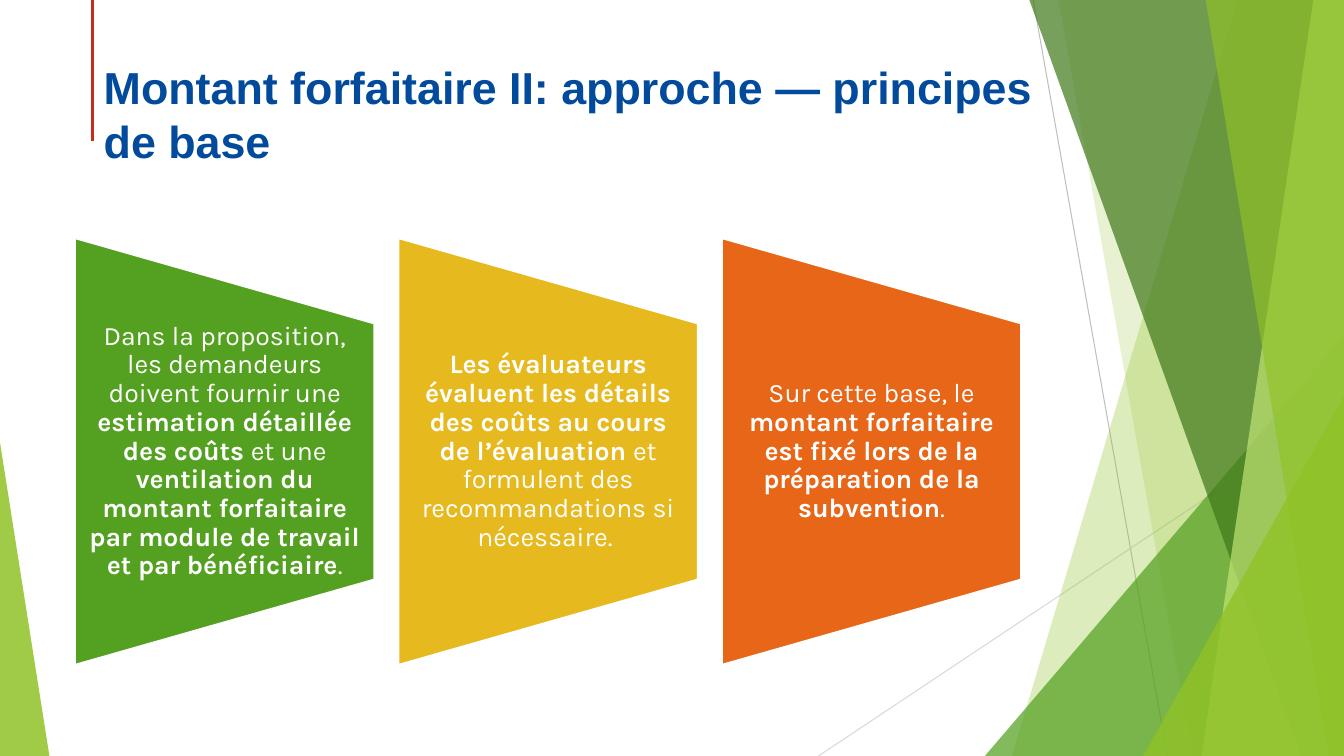
from lxml.etree import SubElement
from pptx import Presentation
from pptx.dml.color import RGBColor
from pptx.enum.shapes import MSO_CONNECTOR, MSO_SHAPE
from pptx.enum.text import MSO_ANCHOR, PP_ALIGN
from pptx.oxml.ns import qn
from pptx.util import Pt

WIDTH, HEIGHT = 960, 540
WHITE = RGBColor(0xFF, 0xFF, 0xFF)
SILVER = RGBColor(0xBF, 0xBF, 0xBF)
PALE_GREY = RGBColor(0xD9, 0xD9, 0xD9)
RED = RGBColor(0xC4, 0x2F, 0x1A)
BLUE = RGBColor(0x02, 0x4B, 0x9C)
LIME = RGBColor(0x90, 0xC2, 0x26)
PALE_LIME = RGBColor(0xC0, 0xE4, 0x74)
GREEN = RGBColor(0x54, 0xA0, 0x21)
DARK_GREEN = RGBColor(0x3F, 0x78, 0x19)
YELLOW = RGBColor(0xE6, 0xB9, 0x1E)
ORANGE = RGBColor(0xE7, 0x66, 0x18)

TITLE = "Montant forfaitaire II: approche — principes de base"
# Each step: colour and runs of (text, bold)
STEPS = [
    (GREEN, [
        ("Dans la proposition, les demandeurs doivent fournir une ", False),
        ("estimation détaillée des coûts ", True),
        ("et une ", False),
        ("ventilation du montant forfaitaire par module de travail "
         "et par bénéficiaire", True),
        (".", False)]),
    (YELLOW, [
        ("Les évaluateurs évaluent les détails des coûts au cours de "
         "l’évaluation ", True),
        ("et formulent des recommandations si nécessaire. ", False)]),
    (ORANGE, [
        ("Sur cette base, le ", False),
        ("montant forfaitaire est fixé lors de la préparation de la "
         "subvention", True),
        (".", False)]),
]


class Deck:
    title_font = {"name": "Arial", "size": Pt(32)}
    step_font = {"name": "Karla", "size": Pt(19)}

    def __init__(self):
        self.prs = Presentation()
        self.prs.slide_width, self.prs.slide_height = Pt(WIDTH), Pt(HEIGHT)
        self.s = self.prs.slides.add_slide(self.prs.slide_layouts[6])

    def line(self, x1, y1, x2, y2, color, width):
        c = self.s.shapes.add_connector(
            MSO_CONNECTOR.STRAIGHT, Pt(x1), Pt(y1), Pt(x2), Pt(y2))
        c.line.color.rgb, c.line.width = color, Pt(width)
        SubElement(c._element.spPr, qn("a:effectLst"))

    def paint(self, sp, color, opacity=100):
        """Fill without shadow or outline; opacity is in percent."""
        sp.shadow.inherit = False
        sp.fill.solid()
        sp.fill.fore_color.rgb = color
        sp.line.fill.background()
        if opacity < 100:
            clr = sp._element.spPr.find(f"{qn('a:solidFill')}/{qn('a:srgbClr')}")
            SubElement(clr, qn("a:alpha"), val=str(opacity * 1000))

    def band(self, top_x, bottom_x, color, opacity):
        """Full-height facet from a slanted left edge to the right slide edge."""
        fb = self.s.shapes.build_freeform(Pt(top_x), Pt(-0.6))
        fb.add_line_segments([(Pt(WIDTH), Pt(-0.6)), (Pt(WIDTH), Pt(HEIGHT)),
                              (Pt(bottom_x), Pt(HEIGHT))], close=True)
        self.paint(fb.convert_to_shape(), color, opacity)

    def triangle(self, x, y, width, apex, color, opacity):
        """Triangle standing on the bottom edge of the slide."""
        sp = self.s.shapes.add_shape(MSO_SHAPE.ISOSCELES_TRIANGLE,
                                     Pt(x), Pt(y), Pt(width), Pt(HEIGHT - y))
        sp.adjustments[0] = apex
        self.paint(sp, color, opacity)

    def trapezoid(self, x, y, width, height, color):
        """Box given as seen, after its quarter turn."""
        sp = self.s.shapes.add_shape(
            MSO_SHAPE.FLOWCHART_MANUAL_OPERATION,
            Pt(x + (width - height) / 2), Pt(y + (height - width) / 2),
            Pt(height), Pt(width))
        sp.rotation = 270
        self.paint(sp, color)
        sp.line.color.rgb, sp.line.width = WHITE, Pt(1.5)

    def text(self, x, y, width, height, runs, font, color, frame, paragraph):
        tb = self.s.shapes.add_textbox(Pt(x), Pt(y), Pt(width), Pt(height))
        tf = tb.text_frame
        tf.word_wrap = True
        p = tf.paragraphs[0]
        for target, values in ((tf, frame), (p, paragraph)):
            for key, value in values.items():
                setattr(target, key, value)
        for words, bold in runs:
            r = p.add_run()
            r.text = words
            for key, value in {**font, "bold": bold}.items():
                setattr(r.font, key, value)
            r.font.color.rgb = color


def main():
    d = Deck()
    d.line(738, 0, 833.8, HEIGHT, SILVER, 0.75)
    d.line(WIDTH, 290.2, 584.6, HEIGHT, PALE_GREY, 0.75)
    d.band(884.2, 722.9, LIME, 30)
    d.band(756, 851.8, LIME, 20)
    d.triangle(703.5, 239.8, 256.5, 1, GREEN, 72)
    d.band(735.1, 929.5, DARK_GREEN, 70)
    d.band(938.2, 858.2, PALE_LIME, 70)
    d.band(861.1, 949, LIME, 65)
    d.triangle(816.6, 283, 143.4, 1, LIME, 80)
    d.triangle(0, 316.1, 35.3, 0, LIME, 85)
    d.line(66.2, 0, 66.2, 100.8, RED, 2.25)

    frame = {"vertical_anchor": MSO_ANCHOR.MIDDLE,
             "margin_left": Pt(9.5), "margin_right": Pt(9.5),
             "margin_top": 0, "margin_bottom": 0}
    paragraph = {"alignment": PP_ALIGN.CENTER, "line_spacing": 0.9}
    for i, (color, runs) in enumerate(STEPS):
        x = 53.5 + i * 231
        d.trapezoid(x, 170, 214, 305, color)
        d.text(x, 231, 214, 183, runs, d.step_font, WHITE, frame, paragraph)

    d.text(67, 39, 687, 60.5, [(TITLE, True)], d.title_font, BLUE,
           {"vertical_anchor": MSO_ANCHOR.TOP}, {"alignment": PP_ALIGN.LEFT})
    d.prs.save("out.pptx")


if __name__ == "__main__":
    main()
